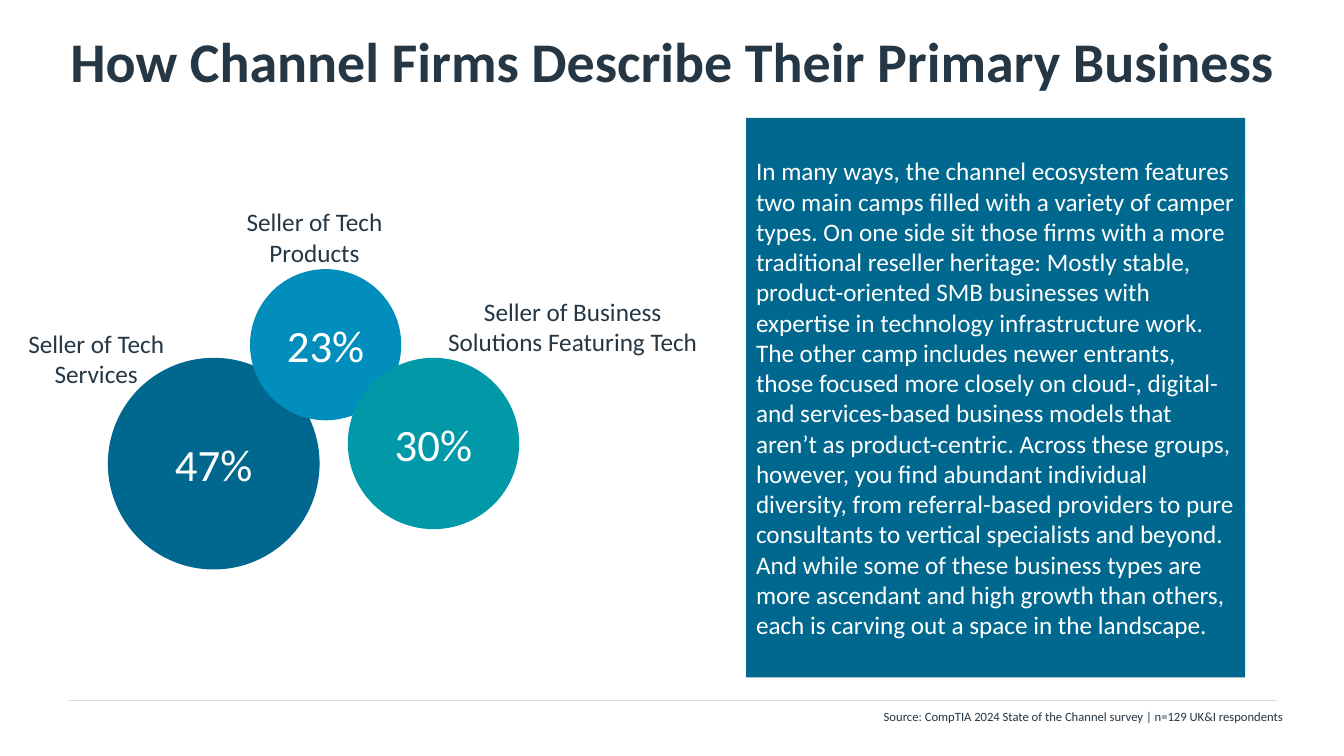
from lxml.etree import SubElement
from pptx import Presentation
from pptx.dml.color import RGBColor
from pptx.enum.shapes import MSO_CONNECTOR, MSO_SHAPE
from pptx.enum.text import MSO_ANCHOR, MSO_AUTO_SIZE, PP_ALIGN
from pptx.oxml.ns import qn
from pptx.util import Inches, Pt

PAPER = RGBColor(0xFE, 0xFF, 0xFE)
INK = RGBColor(0x25, 0x36, 0x44)
RULE = RGBColor(0xDA, 0xDF, 0xE1)
NAVY = RGBColor(0x00, 0x68, 0x8E)
BLUE = RGBColor(0x02, 0x8E, 0xBD)
TEAL = RGBColor(0x01, 0x98, 0xA7)

COMMENTARY = (
    "In many ways, the channel ecosystem features two main camps filled with a variety of "
    "camper types. On one side sit those firms with a more traditional reseller heritage: "
    "Mostly stable, product-oriented SMB businesses with expertise in technology "
    "infrastructure work. The other camp includes newer entrants, those focused more closely "
    "on cloud-, digital- and services-based business models that aren’t as product-centric. "
    "Across these groups, however, you find abundant individual diversity, from "
    "referral-based providers to pure consultants to vertical specialists and beyond. And "
    "while some of these business types are more ascendant and high growth than others, each "
    "is carving out a space in the landscape."
)


class SlideBuilder:
    font_name = "Calibri"

    def __init__(self, slide):
        self.slide = slide
        fill = slide.background.fill
        fill.solid()
        fill.fore_color.rgb = PAPER

    def set_text(self, frame, text, size, color, align, anchor, bold=False):
        frame.word_wrap = True
        frame.auto_size = MSO_AUTO_SIZE.NONE
        frame.vertical_anchor = anchor
        paragraph = frame.paragraphs[0]
        paragraph.alignment = align
        run = paragraph.add_run()
        run.text = text
        run.font.name = self.font_name
        run.font.size = Pt(size)
        run.font.bold = bold
        run.font.color.rgb = color
        return paragraph

    def title(self, text, left, top, width, height):
        heading = self.slide.shapes.title
        heading.left, heading.top = Inches(left), Inches(top)
        heading.width, heading.height = Inches(width), Inches(height)
        paragraph = self.set_text(heading.text_frame, text, 40, INK,
                                  PP_ALIGN.CENTER, MSO_ANCHOR.MIDDLE, bold=True)
        paragraph.line_spacing = 0.9
        paragraph.space_before = Pt(0)
        paragraph.space_after = Pt(6)

    def label(self, text, left, top, width, height, size=18, align=PP_ALIGN.CENTER):
        box = self.slide.shapes.add_textbox(
            Inches(left), Inches(top), Inches(width), Inches(height))
        self.set_text(box.text_frame, text, size, INK, align, MSO_ANCHOR.TOP)

    def block(self, preset, text, left, top, width, height, color, size, align):
        shape = self.slide.shapes.add_shape(
            preset, Inches(left), Inches(top), Inches(width), Inches(height))
        shape.shadow.inherit = False
        shape.fill.solid()
        shape.fill.fore_color.rgb = color
        shape.line.fill.background()
        return self.set_text(shape.text_frame, text, size, PAPER, align, MSO_ANCHOR.MIDDLE)

    def bubble(self, share, left, top, diameter, color):
        self.block(MSO_SHAPE.OVAL, share, left, top, diameter, diameter,
                   color, 32, PP_ALIGN.CENTER)

    def panel(self, text, left, top, width, height):
        paragraph = self.block(MSO_SHAPE.RECTANGLE, text, left, top, width, height,
                               NAVY, 18, PP_ALIGN.LEFT)
        paragraph.space_after = Pt(10)

    def rule(self, left, right, y):
        line = self.slide.shapes.add_connector(
            MSO_CONNECTOR.STRAIGHT, Inches(left), Inches(y), Inches(right), Inches(y))
        line.line.color.rgb = RULE
        line.line.width = Pt(0.5)
        SubElement(line._element.spPr, qn("a:effectLst"))


def main():
    deck = Presentation()
    deck.slide_width, deck.slide_height = Inches(13.33), Inches(7.5)
    page = SlideBuilder(deck.slides.add_slide(deck.slide_layouts[5]))

    page.rule(0.67, 12.67, 6.95)
    page.title("How Channel Firms Describe Their Primary Business", 0, -0.21, 13.33, 1.7)

    segments = [
        ("47%", 1.07, 3.55, 2.1, NAVY, "Seller of Tech Services", 0.17, 3.21, 1.57),
        ("23%", 2.48, 2.67, 1.5, BLUE, "Seller of Tech Products", 2.26, 2, 1.72),
        ("30%", 3.45, 3.55, 1.7, TEAL,
         "Seller of Business Solutions Featuring Tech", 4.29, 2.89, 2.78),
    ]
    for share, left, top, diameter, color, seller, label_left, label_top, width in segments:
        page.bubble(share, left, top, diameter, color)
        page.label(seller, label_left, label_top, width, 0.71)

    page.panel(COMMENTARY, 7.4, 1.17, 4.95, 5.55)
    page.label("Source: CompTIA 2024 State of the Channel survey | n=129 UK&I respondents",
               6.33, 6.98, 6.49, 0.25, size=9, align=PP_ALIGN.RIGHT)

    deck.save("out.pptx")


if __name__ == "__main__":
    main()
